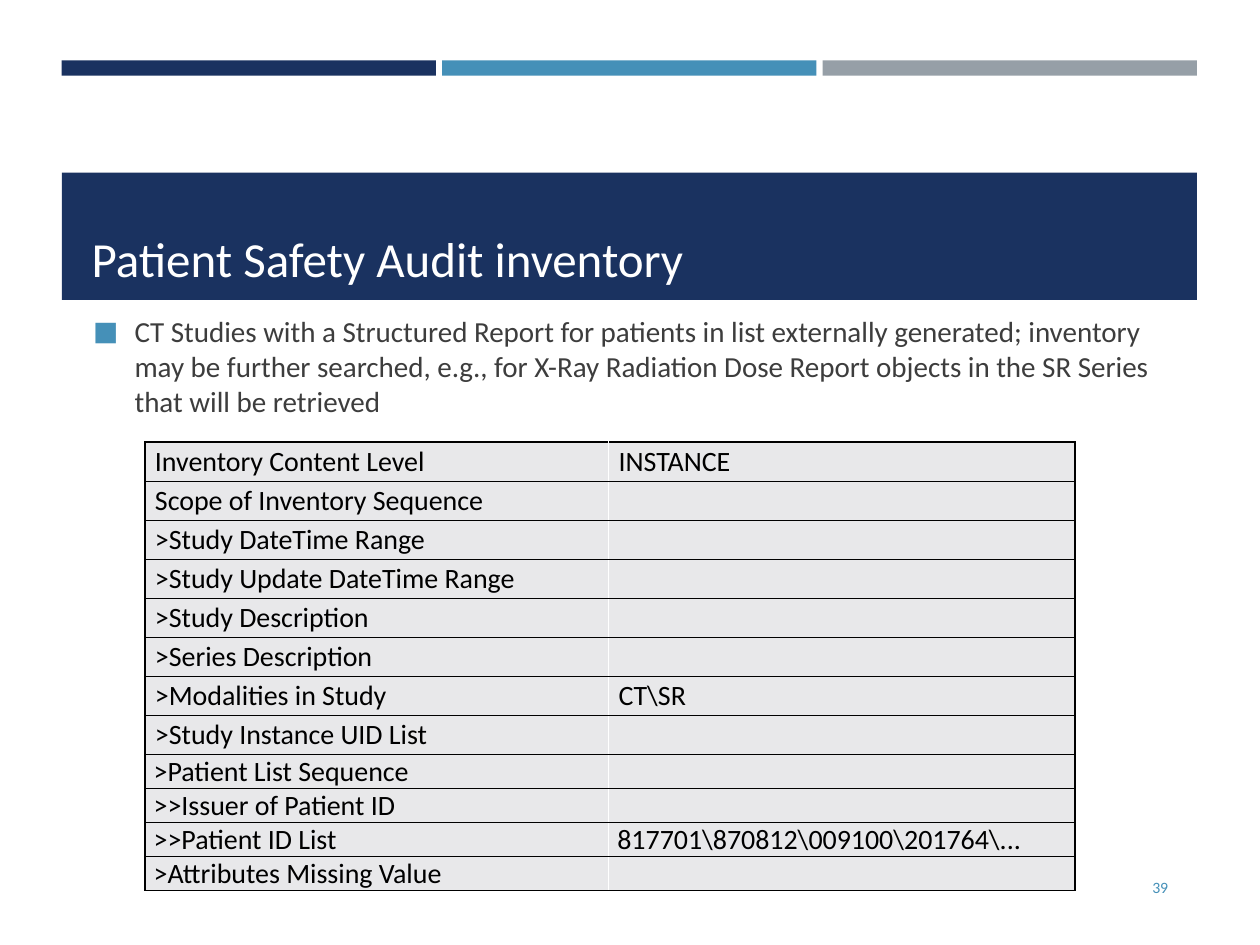
import pptx
import pptx.dml.color
import pptx.enum.shapes
import pptx.enum.text
import pptx.oxml.ns
import pptx.util
from lxml import etree

Inches = pptx.util.Inches
Pt = pptx.util.Pt
Anchor = pptx.enum.text.MSO_ANCHOR
Align = pptx.enum.text.PP_ALIGN

NAVY, BLUE, GRAY = "1A3260", "4590B8", "969FA7"
WHITE, BLACK, CHARCOAL, PALE = "FFFFFF", "000000", "3D3D3D", "E8E8EA"

INVENTORY_ROWS = [
    ("Inventory Content Level", "INSTANCE"),
    ("Scope of Inventory Sequence", ""),
    (">Study DateTime Range", ""),
    (">Study Update DateTime Range", ""),
    (">Study Description", ""),
    (">Series Description", ""),
    (">Modalities in Study", "CT\\SR"),
    (">Study Instance UID List", ""),
    (">Patient List Sequence", ""),
    (">>Issuer of Patient ID", ""),
    (">>Patient ID List", "817701\\870812\\009100\\201764\\..."),
    (">Attributes Missing Value", ""),
]
ROOMY_ROWS = 8


def color(value):
    return pptx.dml.color.RGBColor.from_string(value)


def add_element(parent, tag, **attributes):
    return etree.SubElement(parent, pptx.oxml.ns.qn(tag), attributes)


def apply_format(target, values):
    for name, value in values.items():
        setattr(target, name, value)


class SlideBuilder:
    font_name = "Calibri"

    def __init__(self, slide):
        self.slide = slide

    def bar(self, left, top, width, height, fill):
        shape = self.slide.shapes.add_shape(
            pptx.enum.shapes.MSO_SHAPE.RECTANGLE,
            Inches(left), Inches(top), Inches(width), Inches(height))
        shape.shadow.inherit = False
        shape.fill.solid()
        shape.fill.fore_color.rgb = color(fill)
        shape.line.fill.background()

    def styled_run(self, paragraph, text, size, text_color):
        run = paragraph.add_run()
        run.text = text
        apply_format(run.font, {"name": self.font_name, "size": Pt(size)})
        run.font.color.rgb = color(text_color)

    def text(self, box, text, size, text_color, anchor=Anchor.TOP, align=Align.LEFT, bullet=None):
        shape = self.slide.shapes.add_textbox(*map(Inches, box))
        apply_format(shape.text_frame, {"word_wrap": True, "vertical_anchor": anchor})
        paragraph = shape.text_frame.paragraphs[0]
        paragraph.alignment = align
        if bullet:
            self.bullet(paragraph, bullet)
        self.styled_run(paragraph, text, size, text_color)

    def bullet(self, paragraph, bullet_color):
        properties = paragraph._p.get_or_add_pPr()
        indent = Inches(0.33)
        properties.set("marL", str(indent))
        properties.set("indent", str(-indent))
        add_element(add_element(properties, "a:buClr"), "a:srgbClr", val=bullet_color)
        add_element(properties, "a:buSzPct", val="92000")
        add_element(properties, "a:buFont", typeface=self.font_name)
        add_element(properties, "a:buChar", char="■")

    def borders(self, cell, edges):
        properties = cell._tc.get_or_add_tcPr()
        for edge, edge_color in edges.items():
            line = add_element(properties, f"a:ln{edge}", w=str(Pt(1)))
            add_element(add_element(line, "a:solidFill"), "a:srgbClr", val=edge_color)

    def cell(self, cell, text, size, margins, edges):
        self.borders(cell, edges)
        cell.fill.solid()
        cell.fill.fore_color.rgb = color(PALE)
        apply_format(cell, margins)
        paragraph = cell.text_frame.paragraphs[0]
        if text:
            self.styled_run(paragraph, text, size, BLACK)
        else:
            add_element(paragraph._p, "a:endParaRPr", sz=str(size * 100))

    def table(self, left, top, widths, rows, size):
        heights = [0.31 if index < ROOMY_ROWS else 0.27 for index in range(len(rows))]
        table = self.slide.shapes.add_table(
            len(rows), len(widths), Inches(left), Inches(top),
            Inches(sum(widths)), Inches(sum(heights))).table
        apply_format(table, {"first_row": False, "horz_banding": False})
        for column, width in zip(table.columns, widths):
            column.width = Inches(width)
        for row_index, values in enumerate(rows):
            table.rows[row_index].height = Inches(heights[row_index])
            side, end = (0.08, 0.02) if row_index < ROOMY_ROWS else (0.07, 0)
            margins = {"margin_left": Inches(side), "margin_right": Inches(side),
                       "margin_top": Inches(end), "margin_bottom": Inches(end)}
            for column_index, value in enumerate(values):
                edges = {"L": WHITE if column_index else BLACK,
                         "R": BLACK if column_index else WHITE,
                         "T": BLACK, "B": BLACK}
                self.cell(table.cell(row_index, column_index), value, size, margins, edges)


def main():
    presentation = pptx.Presentation()
    apply_format(presentation, {"slide_width": Inches(10), "slide_height": Inches(7.5)})
    builder = SlideBuilder(presentation.slides.add_slide(presentation.slide_layouts[6]))

    for index, fill in enumerate((NAVY, BLUE, GRAY)):
        builder.bar(0.49 + index * 3.02, 0.48, 2.97, 0.12, fill)
    builder.bar(0.49, 1.37, 9.01, 1.01, NAVY)
    builder.text((0.63, 1.42, 8.74, 0.91), "Patient Safety Audit inventory",
                 28, WHITE, anchor=Anchor.BOTTOM)
    builder.text((0.64, 2.44, 8.74, 0.91),
                 "CT Studies with a Structured Report for patients in list externally generated; "
                 "inventory may be further searched, e.g., for X-Ray Radiation Dose Report objects "
                 "in the SR Series that will be retrieved",
                 16.6, CHARCOAL, bullet=BLUE)
    builder.table(1.15, 3.51, (3.68, 3.7), INVENTORY_ROWS, 16)
    builder.text((8.53, 6.84, 0.84, 0.4), "39", 9, BLUE,
                 anchor=Anchor.MIDDLE, align=Align.RIGHT)

    presentation.save("out.pptx")


if __name__ == "__main__":
    main()
